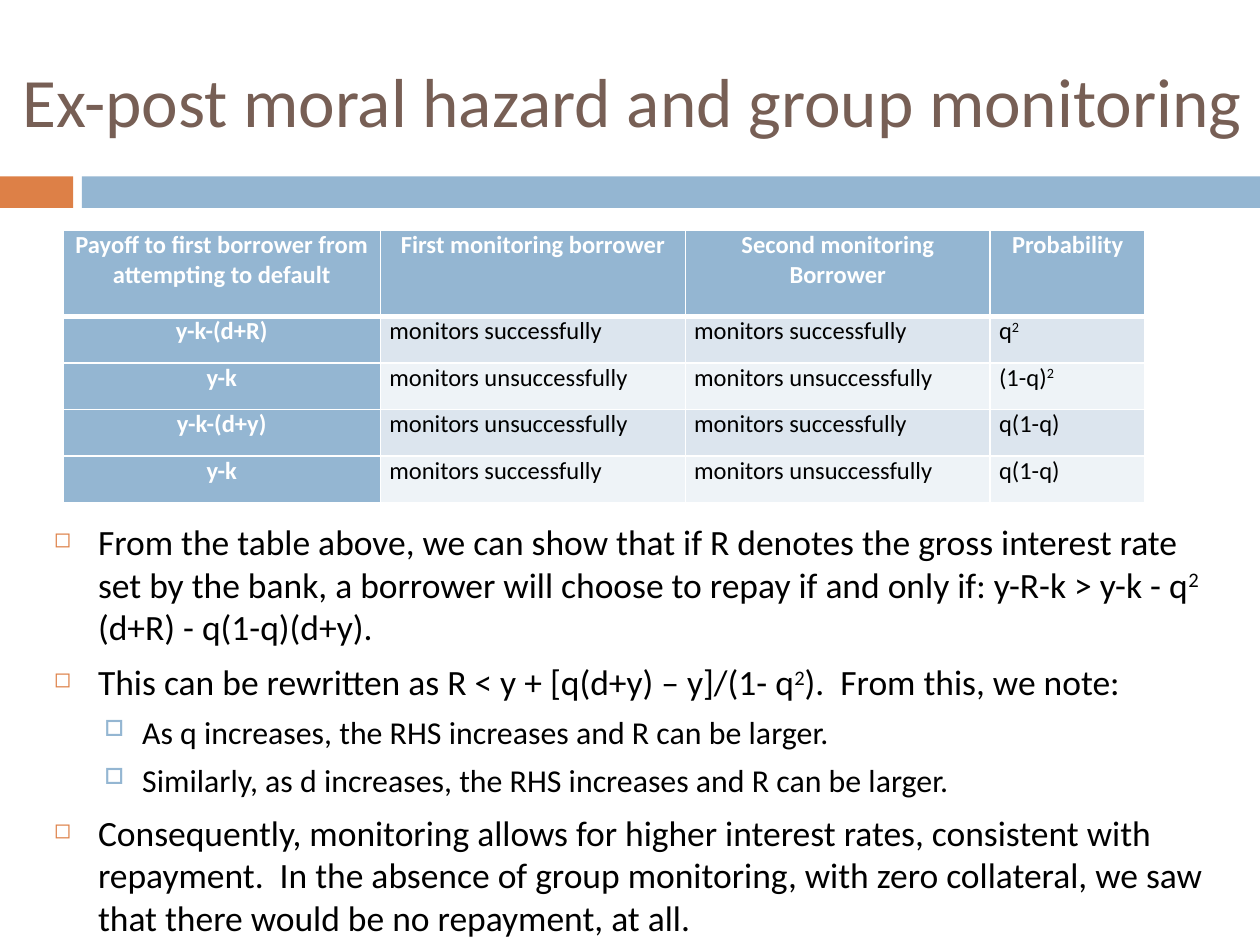
from dataclasses import dataclass

from lxml import etree
from pptx import Presentation
from pptx.dml.color import RGBColor
from pptx.enum.shapes import MSO_SHAPE
from pptx.enum.text import MSO_ANCHOR, PP_ALIGN
from pptx.oxml.ns import qn
from pptx.util import Emu, Inches, Pt

RECTANGLE = MSO_SHAPE.RECTANGLE
MIDDLE, TOP = MSO_ANCHOR.MIDDLE, MSO_ANCHOR.TOP
CENTER, LEFT = PP_ALIGN.CENTER, PP_ALIGN.LEFT

WHITE = RGBColor(0xFF, 0xFF, 0xFF)
BLACK = RGBColor(0x00, 0x00, 0x00)
BROWN = RGBColor(0x77, 0x5F, 0x55)
ORANGE = RGBColor(0xDD, 0x80, 0x47)
BLUE = RGBColor(0x94, 0xB6, 0xD2)
BAND_DARK = RGBColor(0xDC, 0xE5, 0xEE)
BAND_LIGHT = RGBColor(0xEE, 0xF3, 0xF7)

FONT = "Calibri"
SLIDE_W, SLIDE_H = Inches(10), Inches(7.5)
COLUMN_WIDTHS = (2.52, 2.42, 2.42, 1.23)
HEADER_HEIGHT, ROW_HEIGHT = 0.68, 0.37


@dataclass(frozen=True)
class Area:
    """A rectangle in percent of the slide's width and height."""
    left: float
    top: float
    width: float
    height: float

    def emu(self) -> tuple[Emu, ...]:
        return (Emu(int(SLIDE_W * self.left / 100)), Emu(int(SLIDE_H * self.top / 100)),
                Emu(int(SLIDE_W * self.width / 100)), Emu(int(SLIDE_H * self.height / 100)))


@dataclass(frozen=True)
class Level:
    size: float
    indent: float
    hanging: float
    before: float
    bullet: str
    bullet_color: RGBColor
    bullet_percent: int


@dataclass(frozen=True)
class Point:
    level: Level
    text: str


MAIN = Level(20.3, 0.35, 0.35, 7, "◻", ORANGE, 60)
SUB = Level(18.2, 0.7, 0.3, 5.5, "□", BLUE, 70)

TITLE = "Ex-post moral hazard and group monitoring"
# "^" raises the character that follows it.
POINTS = (
    Point(MAIN, "From the table above, we can show that if R denotes the gross interest rate "
                "set by the bank, a borrower will choose to repay if and only if: "
                "y-R-k > y-k - q^2 (d+R) - q(1-q)(d+y)."),
    Point(MAIN, "This can be rewritten as R < y + [q(d+y) – y]/(1- q^2).  From this, we note:"),
    Point(SUB, "As q increases, the RHS increases and R can be larger."),
    Point(SUB, "Similarly, as d increases, the RHS increases and R can be larger."),
    Point(MAIN, "Consequently, monitoring allows for higher interest rates, consistent with "
                "repayment.  In the absence of group monitoring, with zero collateral, "
                "we saw that there would be no repayment, at all."),
)
SUCCESS, FAILURE = "monitors successfully", "monitors unsuccessfully"
PAYOFFS = (
    ("Payoff to first borrower from attempting to default", "First monitoring borrower",
     "Second monitoring Borrower", "Probability"),
    ("y-k-(d+R)", SUCCESS, SUCCESS, "q^2"),
    ("y-k", FAILURE, FAILURE, "(1-q)^2"),
    ("y-k-(d+y)", FAILURE, SUCCESS, "q(1-q)"),
    ("y-k", SUCCESS, FAILURE, "q(1-q)"),
)


def write(paragraph, text: str, size: float, color: RGBColor, bold: bool = False) -> None:
    """Fill a paragraph, raising each character marked with "^"."""
    font = paragraph.font
    font.name, font.size, font.bold = FONT, Pt(size), bold
    font.color.rgb = color
    first, *marked = text.split("^")
    paragraph.add_run().text = first
    for part in marked:
        raised = paragraph.add_run()
        raised.text = part[0]
        raised._r.get_or_add_rPr().set("baseline", "30000")
        if part[1:]:
            paragraph.add_run().text = part[1:]


def add_bar(slide, area: Area, color: RGBColor) -> None:
    bar = slide.shapes.add_shape(RECTANGLE, *area.emu())
    bar.shadow.inherit = False
    bar.fill.solid()
    bar.fill.fore_color.rgb = color
    bar.line.fill.background()


def add_text_frame(slide, area: Area, anchor):
    frame = slide.shapes.add_textbox(*area.emu()).text_frame
    frame.word_wrap = True
    frame.vertical_anchor = anchor
    return frame


def set_bullet(paragraph, level: Level) -> None:
    paragraph.space_before = Pt(level.before)
    properties = paragraph._p.get_or_add_pPr()
    properties.set("marL", str(Inches(level.indent)))
    properties.set("indent", str(-Inches(level.hanging)))
    color = etree.SubElement(properties, qn("a:buClr"))
    etree.SubElement(color, qn("a:srgbClr"), val=str(level.bullet_color))
    etree.SubElement(properties, qn("a:buSzPct"), val=str(level.bullet_percent * 1000))
    etree.SubElement(properties, qn("a:buChar"), char=level.bullet)


def add_points(slide, area: Area, points: tuple[Point, ...]) -> None:
    frame = add_text_frame(slide, area, TOP)
    for index, point in enumerate(points):
        paragraph = frame.add_paragraph() if index else frame.paragraphs[0]
        set_bullet(paragraph, point.level)
        write(paragraph, point.text, point.level.size, BLACK)


def set_borders(cell, top: float, bottom: float) -> None:
    """Draw white borders; the sides are always 1 pt wide."""
    properties = cell._tc.get_or_add_tcPr()
    widths = {"a:lnL": 1, "a:lnR": 1, "a:lnT": top, "a:lnB": bottom}
    for position, (tag, width) in enumerate(widths.items()):
        line = etree.Element(qn(tag), w=str(Pt(width)))
        fill = etree.SubElement(line, qn("a:solidFill"))
        etree.SubElement(fill, qn("a:srgbClr"), val=str(WHITE))
        properties.insert(position, line)


def add_payoff_table(slide, area: Area) -> None:
    table = slide.shapes.add_table(len(PAYOFFS), len(COLUMN_WIDTHS), *area.emu()).table
    table.first_row = table.horz_banding = False
    for column, width in zip(table.columns, COLUMN_WIDTHS):
        column.width = Inches(width)
    for r, texts in enumerate(PAYOFFS):
        table.rows[r].height = Inches(ROW_HEIGHT if r else HEADER_HEIGHT)
        for c, text in enumerate(texts):
            heading = r == 0 or c == 0
            cell = table.cell(r, c)
            cell.margin_left = cell.margin_right = Inches(0.07)
            cell.margin_top = cell.margin_bottom = 0
            cell.fill.solid()
            cell.fill.fore_color.rgb = BLUE if heading else BAND_DARK if r % 2 else BAND_LIGHT
            set_borders(cell, top=3 if r == 1 else 1, bottom=1 if r else 3)
            paragraph = cell.text_frame.paragraphs[0]
            paragraph.alignment = CENTER if heading else LEFT
            write(paragraph, text, 14, WHITE if heading else BLACK, heading)


def main() -> None:
    presentation = Presentation()
    presentation.slide_width, presentation.slide_height = SLIDE_W, SLIDE_H
    slide = presentation.slides.add_slide(presentation.slide_layouts[6])
    add_bar(slide, Area(0, 18.67, 5.8, 3.33), ORANGE)
    add_bar(slide, Area(6.5, 18.67, 93.5, 3.33), BLUE)
    add_points(slide, Area(3.3, 54.4, 94.2, 43.33), POINTS)
    add_payoff_table(slide, Area(5, 24.4, 85.9, 28.8))
    title = add_text_frame(slide, Area(0.8, 3.33, 99.2, 14.4), MIDDLE)
    title.margin_right = 0
    write(title.paragraphs[0], TITLE, 39.6, BROWN)
    presentation.save("out.pptx")


if __name__ == "__main__":
    main()
